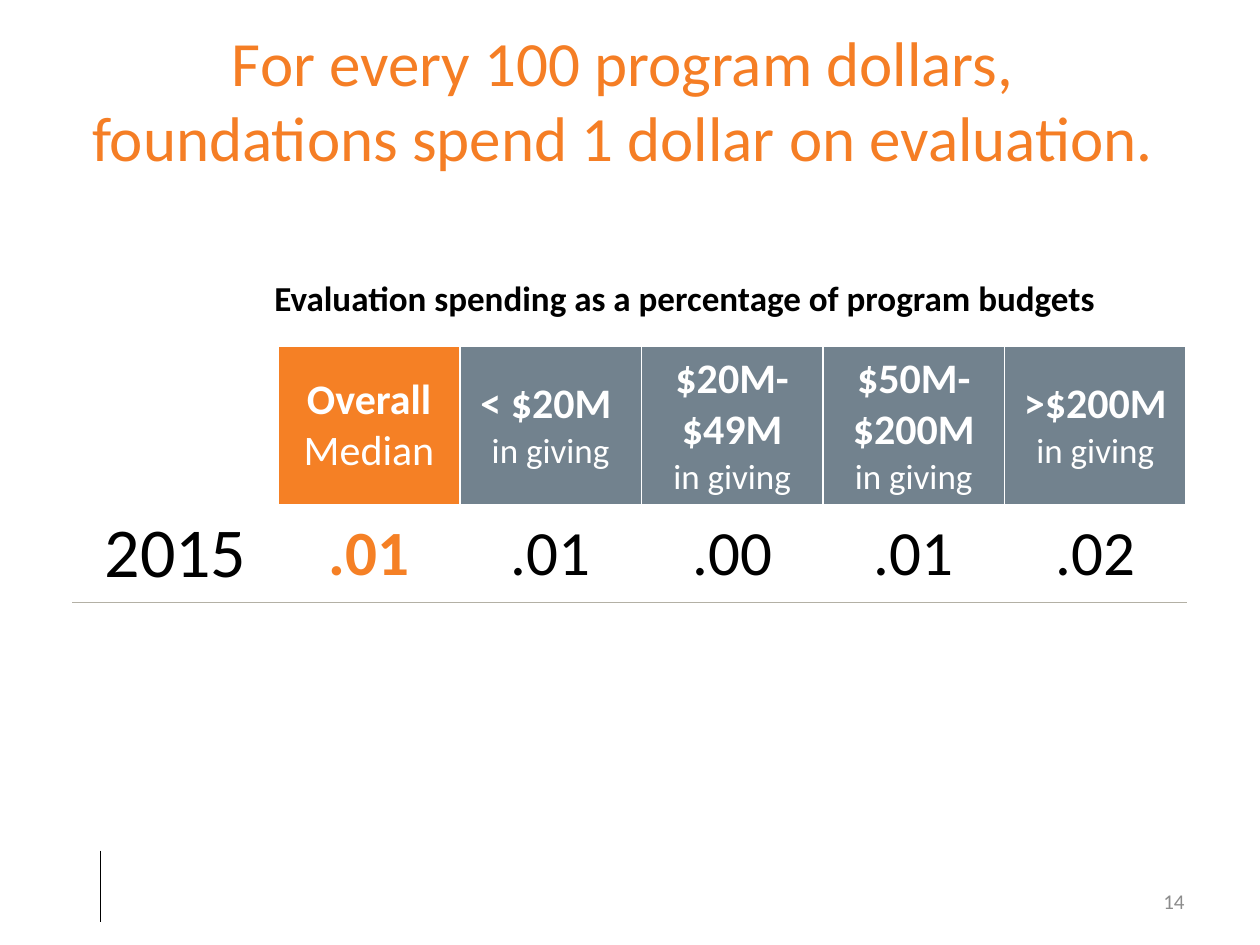
from dataclasses import dataclass
from lxml.etree import SubElement as Sub
from pptx import Presentation
from pptx.dml.color import RGBColor as RGB
from pptx.enum.shapes import MSO_CONNECTOR as Link, MSO_SHAPE as Form
from pptx.enum.text import MSO_ANCHOR as Anchor, PP_ALIGN as Align
from pptx.oxml.ns import qn
from pptx.util import Cm, Pt


@dataclass
class Theme:
    face: str = "Calibri"
    title: str = "F57E25"
    orange: str = "F58025"
    slate: str = "72828E"
    rule: str = "B3B0A5"
    grey: str = "8C8C8C"
    white: str = "FFFFFF"
    black: str = "000000"
    year: int = 40
    big: int = 36
    head: int = 24
    small: int = 20
    page: int = 12


look = Theme()


def put(para, text, size, color, bold=False, align=Align.CENTER):
    para.text = text
    para.alignment = align
    font = para.font
    font.name, font.size, font.bold = look.face, Pt(size), bold
    font.color.rgb = RGB.from_string(color)


def edge(cell, low):
    props = cell._tc.get_or_add_tcPr()
    for side in "LRTB":
        line = Sub(props, qn(f"a:ln{side}"), w=str(Pt(1)))
        fill = Sub(line, qn("a:solidFill"))
        Sub(fill, qn("a:srgbClr"), val=low if side == "B" else look.white)


deck = Presentation()
deck.slide_width, deck.slide_height = Cm(25.4), Cm(19.05)
slide = deck.slides.add_slide(deck.slide_layouts[6])
shapes = slide.shapes

# Footer rule
bar = shapes.add_connector(Link.STRAIGHT, Cm(2.03), Cm(17.15), Cm(2.03), Cm(18.59))
bar.line.color.rgb = RGB.from_string(look.black)
bar.line.width = Pt(0.5)
Sub(bar._element.spPr, qn("a:effectLst"))

# Title and page number
title = "For every 100 program dollars, \vfoundations spend 1 dollar on evaluation. "
for box, text, size, color, align in (
    ((0, 0.53, 25.4, 2.92), title, look.big, look.title, Align.CENTER),
    ((18.21, 17.65, 5.92, 1.02), "14", look.page, look.grey, Align.RIGHT),
):
    frame = shapes.add_textbox(*map(Cm, box)).text_frame
    frame.word_wrap = True
    frame.vertical_anchor = Anchor.MIDDLE
    put(frame.paragraphs[0], text, size, color, align=align)

# Spending table
heads = ["< $20M ", "$20M-$49M", "$50M-$200M", ">$200M"]
rates = [".01", ".01", ".00", ".01", ".02"]
holder = shapes.add_table(2, 6, Cm(1.47), Cm(6.99), Cm(22.43), Cm(5.16))
table = holder.table
table.first_row = table.horz_banding = False
for col, width in zip(table.columns, [4.14] + [3.66] * 5):
    col.width = Cm(width)
for row, height in zip(table.rows, (3.18, 1.98)):
    row.height = Cm(height)

for i, row in enumerate(table.rows):
    for j, cell in enumerate(row.cells):
        edge(cell, look.rule if i else look.white)
        cell.vertical_anchor = Anchor.MIDDLE
        cell.margin_left = cell.margin_right = Cm(0.13)
        cell.margin_top = cell.margin_bottom = Cm(0.13)
        if i:
            cell.fill.background()
        else:
            cell.fill.solid()
            tone = (look.white, look.orange)[j] if j < 2 else look.slate
            cell.fill.fore_color.rgb = RGB.from_string(tone)

# Header row
lead = table.cell(0, 1).text_frame.paragraphs[0]
put(lead, "Overall", look.head, look.white)
lead.runs[0].font.bold = True
lead.add_run().text = " Median"
for j, head in enumerate(heads, 2):
    frame = table.cell(0, j).text_frame
    put(frame.paragraphs[0], head, look.head, look.white, True)
    put(frame.add_paragraph(), "in giving", look.small, look.white)

# Year row
put(table.cell(1, 0).text_frame.paragraphs[0], "2015", look.year, look.black)
for j, rate in enumerate(rates, 1):
    main = j == 1
    color = look.orange if main else look.black
    put(table.cell(1, j).text_frame.paragraphs[0], rate, look.big, color, main)

# Table caption
label = shapes.add_shape(Form.RECTANGLE, Cm(4.65), Cm(5.44), Cm(18.31), Cm(1.12))
label.shadow.inherit = False
label.fill.solid()
label.fill.fore_color.rgb = RGB.from_string(look.white)
label.line.fill.background()
frame = label.text_frame
frame.word_wrap = True
frame.vertical_anchor = Anchor.TOP
put(frame.paragraphs[0], "Evaluation spending as a percentage of program budgets",
    look.small, look.black, True)

deck.save("out.pptx")
